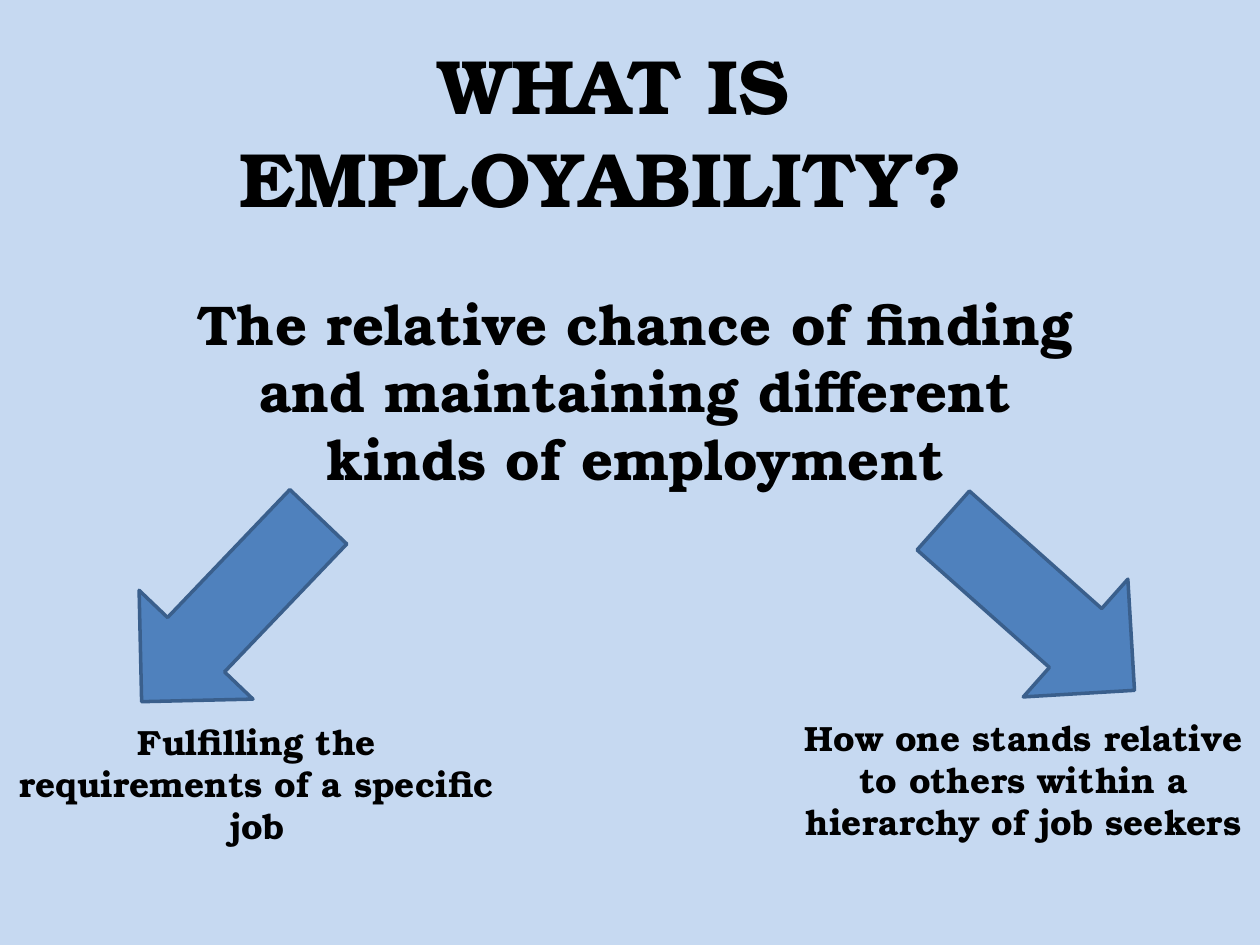
from pptx import Presentation
from pptx.dml.color import RGBColor
from pptx.enum.shapes import MSO_SHAPE
from pptx.enum.text import MSO_ANCHOR, MSO_AUTO_SIZE, PP_ALIGN
from pptx.util import Inches, Pt

RIGHT_ARROW = MSO_SHAPE.RIGHT_ARROW
TOP = MSO_ANCHOR.TOP
FIT_SHAPE = MSO_AUTO_SIZE.SHAPE_TO_FIT_TEXT
CENTER = PP_ALIGN.CENTER

FONT = "TeX Gyre Bonum"
BACKGROUND = RGBColor(0xC6, 0xD9, 0xF1)
BLACK = RGBColor(0x00, 0x00, 0x00)
ARROW_FILL = RGBColor(0x4F, 0x81, 0xBD)
ARROW_LINE = RGBColor(0x3A, 0x5F, 0x8C)

TITLE_BOX = (1.25, 0.25, 7.25, 1.58)
DEFINITION_BOX = (1.42, 2.25, 7.25, 1.72)
BRANCHES = [
    ("How one stands relative to others within a hierarchy of job seekers",
     (6.25, 5.64, 3.75, 1.11), (7.23, 4.18, 2.03, 1.25), 41.6),
    ("Fulfilling the requirements of a specific job",
     (0, 5.67, 4.08, 1.11), (0.81, 4.21, 2.03, 1.25), 133.7),
]


def to_inches(box):
    return [Inches(length) for length in box]


def write_centered(frame, text, size):
    frame.word_wrap = True
    frame.auto_size = FIT_SHAPE
    frame.vertical_anchor = TOP
    paragraph = frame.paragraphs[0]
    paragraph.alignment = CENTER
    run = paragraph.add_run()
    run.text = text
    run.font.name = FONT
    run.font.size = Pt(size)
    run.font.bold = True
    run.font.color.rgb = BLACK


def place_title(slide, box):
    title = slide.shapes.title
    title.left, title.top, title.width, title.height = to_inches(box)
    write_centered(title.text_frame, "WHAT IS EMPLOYABILITY? ", 44)


def place_statement(slide, box, text, size):
    statement = slide.shapes.add_textbox(*to_inches(box))
    write_centered(statement.text_frame, text, size)


def place_arrow(slide, box, angle):
    arrow = slide.shapes.add_shape(RIGHT_ARROW, *to_inches(box))
    arrow.rotation = angle
    arrow.shadow.inherit = False
    arrow.fill.solid()
    arrow.fill.fore_color.rgb = ARROW_FILL
    arrow.line.color.rgb = ARROW_LINE
    arrow.line.width = Pt(2)


def place_branch(slide, text, text_box, arrow_box, angle):
    place_statement(slide, text_box, text, 20)
    place_arrow(slide, arrow_box, angle)


def main():
    presentation = Presentation()
    presentation.slide_width = Inches(10)
    presentation.slide_height = Inches(7.5)
    title_only = presentation.slide_layouts.get_by_name("Title Only")
    slide = presentation.slides.add_slide(title_only)
    slide.background.fill.solid()
    slide.background.fill.fore_color.rgb = BACKGROUND

    place_title(slide, TITLE_BOX)
    place_statement(
        slide, DEFINITION_BOX,
        "The relative chance of finding and maintaining different kinds of employment", 32)
    for branch in BRANCHES:
        place_branch(slide, *branch)

    presentation.save("out.pptx")


if __name__ == "__main__":
    main()
